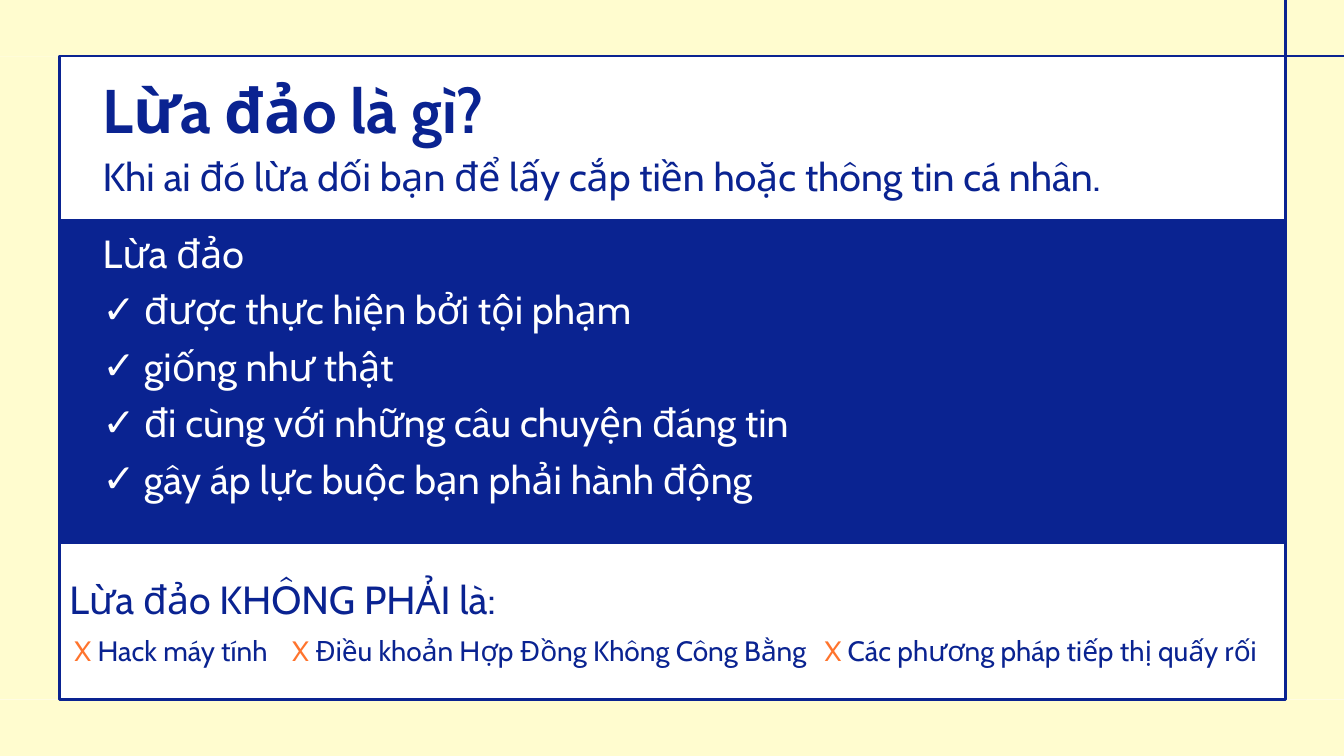
from lxml.etree import SubElement
from pptx import Presentation
from pptx.dml.color import RGBColor
from pptx.enum.shapes import MSO_SHAPE
from pptx.enum.text import MSO_ANCHOR
from pptx.oxml.ns import qn
from pptx.util import Inches, Pt

COLORS = {"navy": "0A2391", "cream": "FFFCCF", "white": "FFFFFF", "orange": "FF742D"}
FONT = "Cabin"
W, H = 13.33, 7.5
EDGE, RIGHT = 0.59, 12.75
TOP, BOTTOM = 0.56, 6.94


def rgb(name):
    return RGBColor.from_string(COLORS[name])


def add_rect(s, box, fill=None, line=None):
    sp = s.shapes.add_shape(MSO_SHAPE.RECTANGLE, *map(Inches, box))
    sp.shadow.inherit = False
    if fill:
        sp.fill.solid()
        sp.fill.fore_color.rgb = rgb(fill)
    else:
        sp.fill.background()
    if line:
        sp.line.color.rgb = rgb(line)
        sp.line.width = Pt(1.5)
    else:
        sp.line.fill.background()


def add_text_box(s, box, anchor=MSO_ANCHOR.TOP):
    tf = s.shapes.add_textbox(*map(Inches, box)).text_frame
    tf.word_wrap = True
    tf.vertical_anchor = anchor
    return tf


def add_par(tf, runs, size, bold=False, bullet=None, indent=0, tabs=()):
    first = not tf.paragraphs[0].runs
    p = tf.paragraphs[0] if first else tf.add_paragraph()
    p.line_spacing = 0.9
    p.space_before = Pt(0 if first else 10)
    pPr = p._p.get_or_add_pPr()
    if indent:
        pPr.set("marL", str(Inches(indent)))
    if bullet:
        pPr.set("indent", str(-Inches(indent)))
        SubElement(pPr, qn("a:buFont"), typeface="Arial")
        SubElement(pPr, qn("a:buChar"), char=bullet)
    if tabs:
        tab_list = SubElement(pPr, qn("a:tabLst"))
        for pos in tabs:
            SubElement(tab_list, qn("a:tab"), pos=str(Inches(pos)), algn="l")
    for text, color in runs:
        r = p.add_run()
        r.text = text
        r.font.name = FONT
        r.font.size = Pt(size)
        r.font.bold = bold
        r.font.color.rgb = rgb(color)


def add_frame(s, x, y, w, h):
    for box in ((0, 0, W, y), (0, y + h, W, H - y - h),
                (0, y, x, h), (x + w, y, W - x - w, h)):
        add_rect(s, box, fill="cream")
    add_rect(s, (x, y, w, h), line="navy")
    add_rect(s, (x + w, y - 0.69, 0.71, 0.69), line="navy")


def add_heading(s, x, y, w, h):
    tf = add_text_box(s, (x, y, w, h), MSO_ANCHOR.MIDDLE)
    add_par(tf, [("Lừa đảo là gì?", "navy")], 44, bold=True)
    tf = add_text_box(s, (x, y + 1.11, w, 0.61))
    add_par(tf, [("Khi ai đó lừa dối bạn để lấy cắp tiền hoặc thông tin cá nhân.", "navy")], 28)


def add_traits(s, x, y, w, h):
    add_rect(s, (x, y, w, h), fill="navy", line="navy")
    tf = add_text_box(s, (x + 0.33, y + 0.1, w - 0.64, h - 0.28))
    add_par(tf, [("Lừa đảo", "white")], 28)
    for trait in ("được thực hiện bởi tội phạm", "giống như thật",
                  "đi cùng với những câu chuyện đáng tin",
                  "gây áp lực buộc bạn phải hành động"):
        add_par(tf, [(trait, "white")], 28, bullet="✓", indent=0.41)


def add_exclusions(s, x, y, w, h):
    tf = add_text_box(s, (x, y, w, h))
    add_par(tf, [("Lừa đảo KHÔNG PHẢI là:", "navy")], 28)
    runs = []
    for item in ("Hack máy tính", "Điều khoản Hợp Đồng Không Công Bằng",
                 "Các phương pháp tiếp thị quấy rối"):
        runs += [("\tX " if runs else "X ", "orange"), (item, "navy")]
    add_par(tf, runs, 20, indent=0.05, tabs=(2.16, 7.44))


def main():
    prs = Presentation()
    prs.slide_width, prs.slide_height = Inches(W), Inches(H)
    s = prs.slides.add_slide(prs.slide_layouts[6])
    add_traits(s, EDGE, 2.18, 12.14, 3.21)
    add_frame(s, EDGE, TOP, RIGHT - EDGE, BOTTOM - TOP)
    add_heading(s, 0.92, 0.4, 11.5, 1.45)
    add_exclusions(s, EDGE, 5.71, 12.1, 1.19)
    prs.save("out.pptx")


if __name__ == "__main__":
    main()
